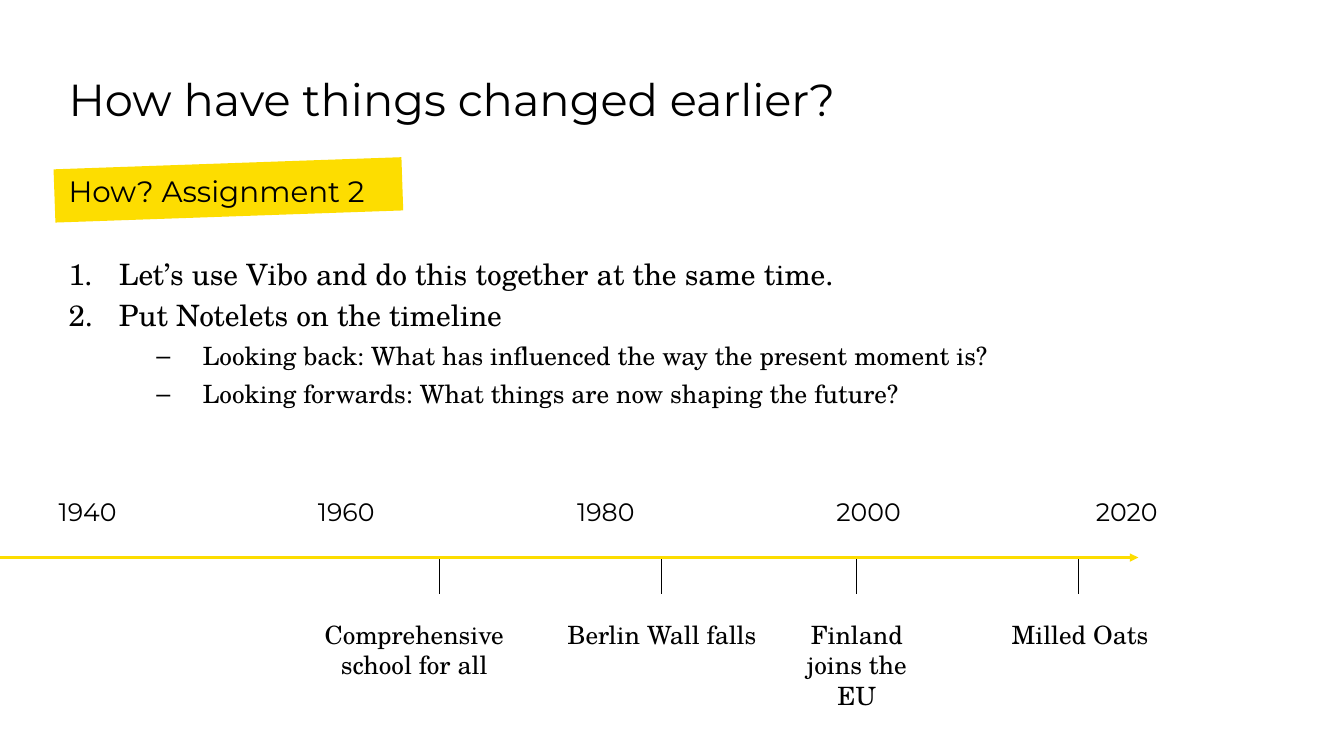
"""Builds a slide with an assignment and a timeline of past changes."""
from lxml.etree import SubElement
from pptx import Presentation
from pptx.dml.color import RGBColor
from pptx.enum.shapes import MSO_CONNECTOR, MSO_SHAPE
from pptx.enum.text import MSO_ANCHOR, MSO_AUTO_SIZE, PP_ALIGN
from pptx.oxml.ns import qn
from pptx.util import Inches, Pt

SANS, SERIF = "Montserrat", "TeX Gyre Schola"
BLACK, YELLOW = "000000", "FDDD00"

TITLE = "How have things changed earlier?"
HEADING = "How? Assignment 2"
STEPS = [
    "Let’s use Vibo and do this together at the same time.",
    "Put Notelets on the timeline",
]
QUESTIONS = [
    "Looking back: What has influenced the way the present moment is?",
    "Looking forwards: What things are now shaping the future?",
]
YEARS = ["1940", "1960", "1980", "2000", "2020"]
EVENTS = [
    ("Comprehensive school for all", 32.7, 23.7, 14.25),
    ("Berlin Wall falls", 49.2, 41.4, 15.7),
    ("Finland joins the EU", 63.75, 58.5, 10.5),
    ("Milled Oats", 80.25, 75.1, 10.5),
]

TITLE_BOX = (5.1, 5.2, 89.8, 15.7)
BODY_BOX = (5.1, 23.45, 89.8, 64.4)
HIGHLIGHT_BOX = (4.05, 21.6, 25.9, 7.05)
FIRST_YEAR, YEAR_STEP, YEAR_TOP = 4.37, 19.29, 65.6
AXIS_TOP, AXIS_END, TICK_LENGTH, EVENT_TOP = 73.75, 84.7, 4.8, 81.95

deck = Presentation()
deck.slide_width, deck.slide_height = Inches(13.33), Inches(7.5)
slide = deck.slides.add_slide(deck.slide_layouts[1])


def grid(*lengths):
    """Turn alternating column and row hundredths into slide lengths."""
    sides = (deck.slide_width, deck.slide_height)
    return [int(sides[i % 2] * length / 100) for i, length in enumerate(lengths)]


def color(value):
    """Return the colour of a hex string."""
    return RGBColor.from_string(value)


def style(paragraph, text, face, size, align=PP_ALIGN.LEFT):
    """Write a paragraph and set its font."""
    paragraph.text = text
    paragraph.alignment = align
    paragraph.font.name, paragraph.font.size = face, Pt(size)
    paragraph.font.color.rgb = color(BLACK)


def set_frame(frame, anchor=MSO_ANCHOR.TOP, wrap=True):
    """Remove the margins of a text frame and fix its layout."""
    frame.margin_left = frame.margin_right = frame.margin_top = frame.margin_bottom = 0
    frame.vertical_anchor, frame.word_wrap = anchor, wrap
    frame.auto_size = MSO_AUTO_SIZE.NONE


def place(shape, box):
    """Move a placeholder to a box on the grid."""
    shape.left, shape.top, shape.width, shape.height = grid(*box)


def add_label(text, box, face, align, wrap):
    """Add a timeline label."""
    frame = slide.shapes.add_textbox(*grid(*box)).text_frame
    set_frame(frame, wrap=wrap)
    style(frame.paragraphs[0], text, face, 18, align)


def add_line(ends, stroke, width):
    """Add a straight line and return its line properties element."""
    connector = slide.shapes.add_connector(MSO_CONNECTOR.STRAIGHT, *grid(*ends))
    connector.line.color.rgb, connector.line.width = color(stroke), Pt(width)
    properties = connector._element.spPr
    SubElement(properties, qn("a:effectLst"))
    return properties.find(qn("a:ln"))


def set_bullet(paragraph, margin, hanging, tag, **attributes):
    """Set the indent and bullet of a paragraph."""
    properties = paragraph._p.get_or_add_pPr()
    properties.set("marL", str(Inches(margin)))
    properties.set("indent", str(-Inches(hanging)))
    if tag != "a:buNone":
        bullet_color = SubElement(properties, qn("a:buClr"))
        SubElement(bullet_color, qn("a:srgbClr"), val=BLACK)
    SubElement(properties, qn(tag), **attributes)


title = slide.shapes.title
place(title, TITLE_BOX)
set_frame(title.text_frame, MSO_ANCHOR.MIDDLE)
style(title.text_frame.paragraphs[0], TITLE, SANS, 32)

body = slide.placeholders[1]
place(body, BODY_BOX)
set_frame(body.text_frame)
number = (0.5, 0.5, "a:buAutoNum", {"type": "arabicPeriod"})
dash = (1.33, 0.46, "a:buChar", {"char": "–"})
rows = [(HEADING, SANS, 21, 0, 0.9, 0, (0, 0, "a:buNone", {}))]
rows += [(step, SERIF, 21, 0, 1.0, 4 if i else 33.5, number) for i, step in enumerate(STEPS)]
rows += [(question, SERIF, 18, 1, 0.9, 8, dash) for question in QUESTIONS]
for i, (text, face, size, level, spacing, before, bullet) in enumerate(rows):
    paragraph = body.text_frame.add_paragraph() if i else body.text_frame.paragraphs[0]
    paragraph.level = level
    paragraph.line_spacing, paragraph.space_before = spacing, Pt(before)
    margin, hanging, tag, attributes = bullet
    set_bullet(paragraph, margin, hanging, tag, **attributes)
    style(paragraph, text, face, size)

highlight = slide.shapes.add_shape(MSO_SHAPE.RECTANGLE, *grid(*HIGHLIGHT_BOX))
highlight.rotation = 358
highlight.shadow.inherit = False
highlight.fill.solid()
highlight.fill.fore_color.rgb = color(YELLOW)
highlight.line.fill.background()
title._element.addprevious(highlight._element)

for i, year in enumerate(YEARS):
    add_label(year, (FIRST_YEAR + i * YEAR_STEP, YEAR_TOP, 5.1, 4.8), SANS, PP_ALIGN.LEFT, False)
for text, tick, left, width in EVENTS:
    add_label(text, (left, EVENT_TOP, width, 7.75), SERIF, PP_ALIGN.CENTER, True)
    add_line((tick, AXIS_TOP, tick, AXIS_TOP + TICK_LENGTH), BLACK, 0.5)
axis = add_line((0, AXIS_TOP, AXIS_END, AXIS_TOP), YELLOW, 2)
SubElement(axis, qn("a:tailEnd"), type="triangle")

deck.save("out.pptx")
